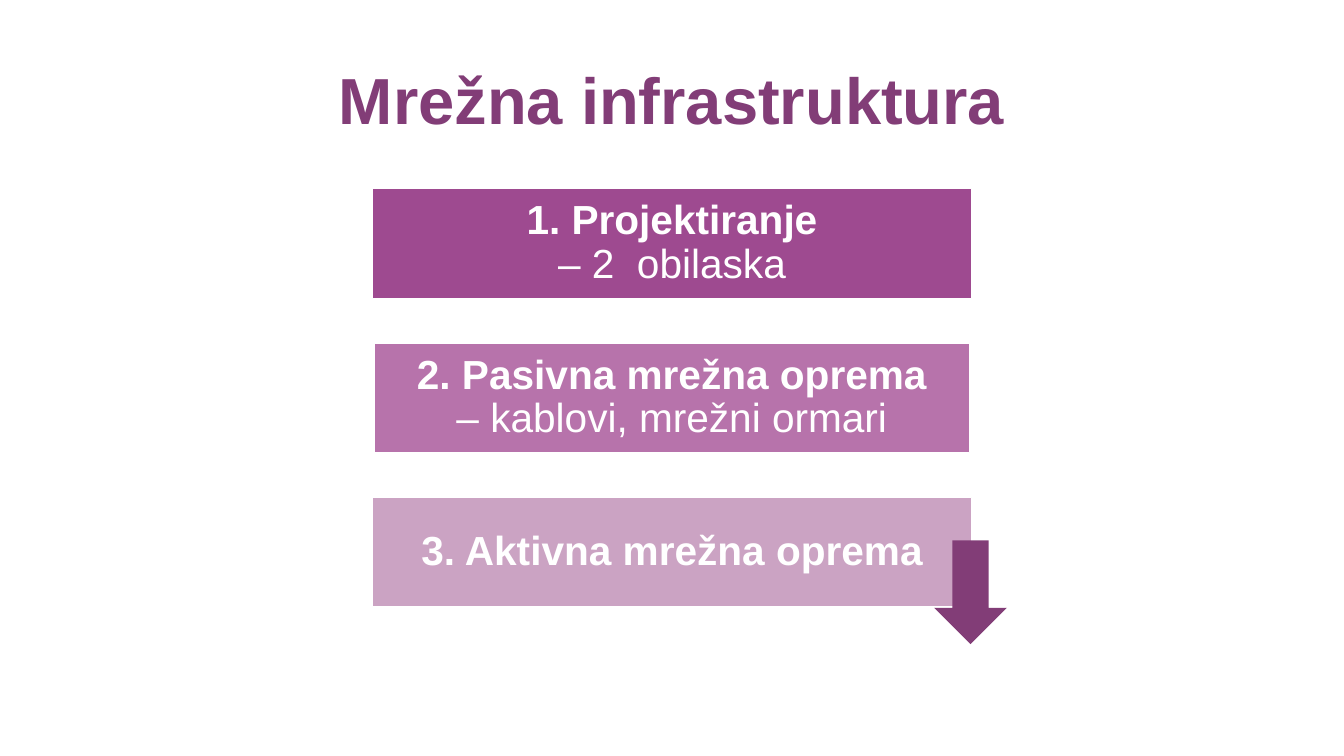
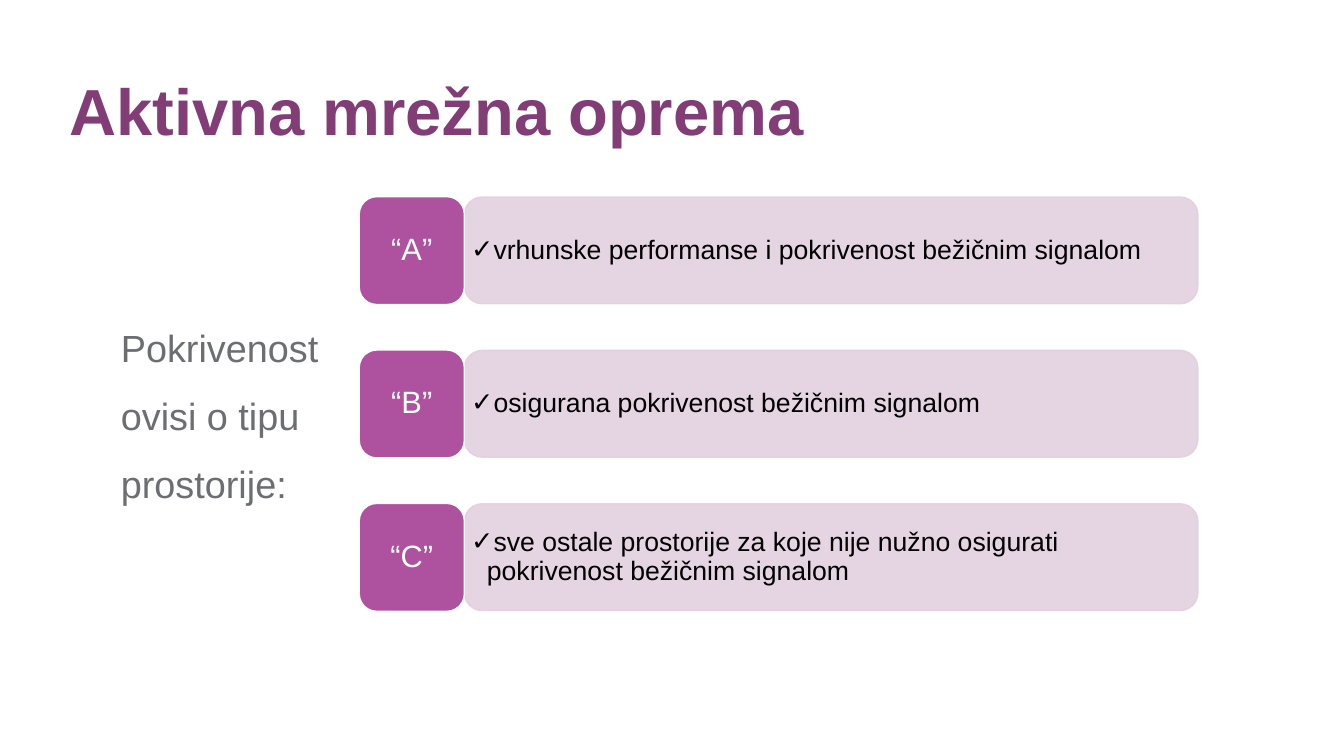
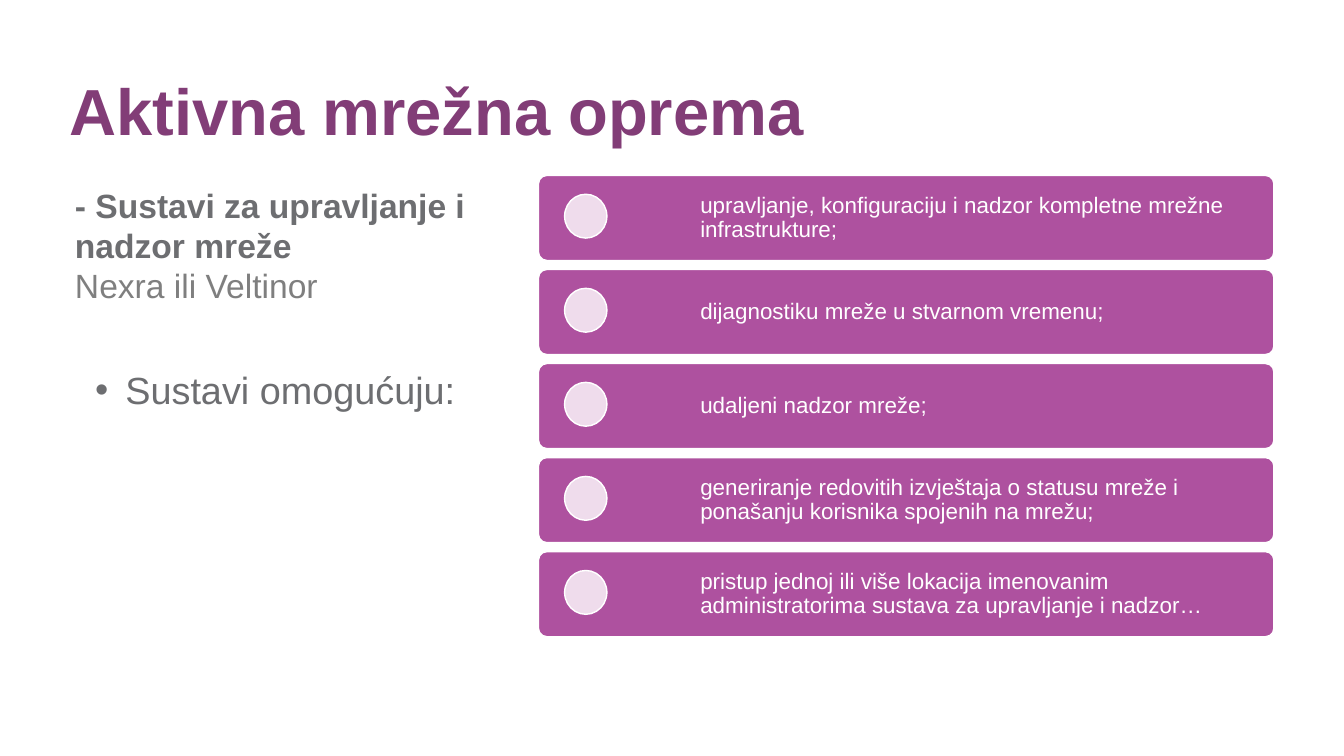
from lxml.etree import SubElement
from pptx import Presentation
from pptx.dml.color import RGBColor
from pptx.enum.shapes import MSO_SHAPE as SHAPE
from pptx.enum.text import MSO_ANCHOR as ANCHOR, PP_ALIGN as ALIGN
from pptx.oxml.ns import qn
from pptx.util import Cm, Pt

# Shared look
FONT = "Arial"
PLUM = RGBColor(0x82, 0x3D, 0x77)
PURPLE = RGBColor(0xAE, 0x51, 0x9F)
STEP_FILLS = (RGBColor(0x9E, 0x4A, 0x90), RGBColor(0xB7, 0x73, 0xAB),
              RGBColor(0xCB, 0xA3, 0xC3))
PALE = RGBColor(0xE3, 0xD0, 0xDF)
DOT = RGBColor(0xEF, 0xDC, 0xEC)
WHITE = RGBColor(0xFF, 0xFF, 0xFF)
BLACK = RGBColor(0, 0, 0)
GREY = RGBColor(0x6D, 0x6E, 0x71)
MID_GREY = RGBColor(0x7F, 0x7F, 0x7F)


def set_frame(sp, insets, anchor):
    """Wrap the text and set (left, top, right, bottom) insets in cm."""
    tf = sp.text_frame
    tf.word_wrap = True
    tf.vertical_anchor = anchor
    (tf.margin_left, tf.margin_top,
     tf.margin_right, tf.margin_bottom) = map(Cm, insets)
    return tf


def set_bullet(p, char, color, left, hang):
    pPr = p._p.get_or_add_pPr()
    pPr.set("marL", str(Cm(left)))
    pPr.set("indent", str(-Cm(hang)))
    clr = SubElement(pPr, qn("a:buClr"))
    SubElement(clr, qn("a:srgbClr"), val=str(color))
    SubElement(pPr, qn("a:buFont"), typeface=FONT)
    SubElement(pPr, qn("a:buChar"), char=char)


def write(tf, text, size, color, bold=False, align=ALIGN.LEFT, spacing=0.9,
          before=0, bullet=None, tail=None, tail_color=None):
    """Add a paragraph; tail is a regular-weight line below the text."""
    p = tf.paragraphs[0] if not tf.text else tf.add_paragraph()
    p.alignment = align
    p.line_spacing = spacing
    p.space_before = Pt(before)
    if bullet:
        set_bullet(p, *bullet)
    parts = [(text, color, bold)]
    if tail:
        parts.append((tail, tail_color or color, False))
    for i, (words, ink, weight) in enumerate(parts):
        if i:
            p.add_line_break()
        r = p.add_run()
        r.text = words
        r.font.name = FONT
        r.font.size = Pt(size)
        r.font.bold = weight
        r.font.color.rgb = ink


def add_box(s, x, y, w, h, anchor=ANCHOR.TOP):
    sp = s.shapes.add_textbox(Cm(x), Cm(y), Cm(w), Cm(h))
    return set_frame(sp, (0.25, 0.13, 0.25, 0.13), anchor)


def add_title(s, text, x, y, align=ALIGN.LEFT):
    tf = add_box(s, x, y, 60.93, 3.94, ANCHOR.BOTTOM)
    write(tf, text, 93, PLUM, bold=True, align=align)


def add_block(s, kind, x, y, w, h, fill, line=WHITE, alpha=None):
    sp = s.shapes.add_shape(kind, Cm(x), Cm(y), Cm(w), Cm(h))
    sp.shadow.inherit = False
    sp.fill.solid()
    sp.fill.fore_color.rgb = fill
    if line is None:
        sp.line.fill.background()
    else:
        sp.line.color.rgb = line
        sp.line.width = Pt(2)
    if alpha:
        for clr in sp._element.spPr.iter(qn("a:srgbClr")):
            SubElement(clr, qn("a:alpha"), val=str(alpha * 1000))
    return sp


def add_step(s, y, fill, head, tail, x, w):
    sp = add_block(s, SHAPE.RECTANGLE, x, y, w, 5.54, fill)
    tf = set_frame(sp, [0.61] * 4, ANCHOR.MIDDLE)
    write(tf, head, 58, WHITE, bold=True, align=ALIGN.CENTER, tail=tail)


def add_room_type(s, y, letter, text):
    panel = add_block(s, SHAPE.FLOWCHART_ALTERNATE_PROCESS, 23.4, y + 0.02,
                      36.96, 5.38, PALE, line=PALE, alpha=90)
    tf = set_frame(panel, [0.08] * 4, ANCHOR.MIDDLE)
    write(tf, text, 38, BLACK, bullet=("✓", BLACK, 0.79, 0.79))
    tile = add_block(s, SHAPE.ROUNDED_RECTANGLE, 18.1, y, 5.3, 5.44, PURPLE)
    tf = set_frame(tile, (0.46, 0.23, 0.46, 0.23), ANCHOR.MIDDLE)
    write(tf, f"“{letter}”", 44, WHITE, align=ALIGN.CENTER)


def add_feature(s, y, text):
    bar = add_block(s, SHAPE.ROUNDED_RECTANGLE, 27.13, y, 37.06, 4.29, PURPLE)
    bar.adjustments[0] = 0.1
    tf = set_frame(bar, (8.03, 0.2, 0.2, 0.2), ANCHOR.MIDDLE)
    write(tf, text, 32, WHITE)
    add_block(s, SHAPE.OVAL, 28.45, y + 0.95, 2.13, 2.21, DOT)


def infrastructure_slide(s):
    add_title(s, "Mrežna infrastruktura", 3.38, 3.15, ALIGN.CENTER)
    steps = (
        ("1. Projektiranje", "– 2  obilaska", 18.77, 30.18),
        ("2. Pasivna mrežna oprema", "– kablovi, mrežni ormari", 18.85, 30),
        ("3. Aktivna mrežna oprema", None, 18.77, 30.18),
    )
    for i, (fill, step) in enumerate(zip(STEP_FILLS, steps)):
        add_step(s, 9.5 + i * 7.78, fill, *step)
    add_block(s, SHAPE.DOWN_ARROW, 47.07, 27.23, 3.66, 5.23, PLUM, line=None)


def coverage_slide(s):
    add_title(s, "Aktivna mrežna oprema", 3.25, 3.73)
    tf = add_box(s, 5.84, 9.98, 12.24, 20.78, ANCHOR.MIDDLE)
    write(tf, "Pokrivenost ovisi o tipu prostorije:", 54, GREY, spacing=1.5)
    rooms = (
        ("A", "vrhunske performanse i pokrivenost bežičnim signalom"),
        ("B", "osigurana pokrivenost bežičnim signalom"),
        ("C", "sve ostale prostorije za koje nije nužno osigurati "
              "pokrivenost bežičnim signalom"),
    )
    for i, room in enumerate(rooms):
        add_room_type(s, 9.91 + i * 7.73, *room)


def management_slide(s):
    add_title(s, "Aktivna mrežna oprema", 3.25, 3.73)
    tf = add_box(s, 3.53, 9.17, 21.44, 19.76)
    write(tf, "- Sustavi za upravljanje i nadzor mreže", 48, GREY, bold=True,
          spacing=1, tail="Nexra ili Veltinor", tail_color=MID_GREY)
    write(tf, "Sustavi omogućuju:", 54, GREY, spacing=1, before=88,
          bullet=("•", GREY, 2.54, 1.52))
    features = (
        "upravljanje, konfiguraciju i nadzor kompletne mrežne infrastrukture;",
        "dijagnostiku mreže u stvarnom vremenu;",
        "udaljeni nadzor mreže;",
        "generiranje redovitih izvještaja o statusu mreže i ponašanju "
        "korisnika spojenih na mrežu;",
        "pristup jednoj ili više lokacija imenovanim administratorima "
        "sustava za upravljanje i nadzor…",
    )
    for i, feature in enumerate(features):
        add_feature(s, 8.84 + i * 4.74, feature)


def main():
    prs = Presentation()
    prs.slide_width, prs.slide_height = Cm(67.72), Cm(38.1)
    blank = prs.slide_layouts[6]
    for build in (infrastructure_slide, coverage_slide, management_slide):
        build(prs.slides.add_slide(blank))
    prs.save("out.pptx")


if __name__ == "__main__":
    main()
